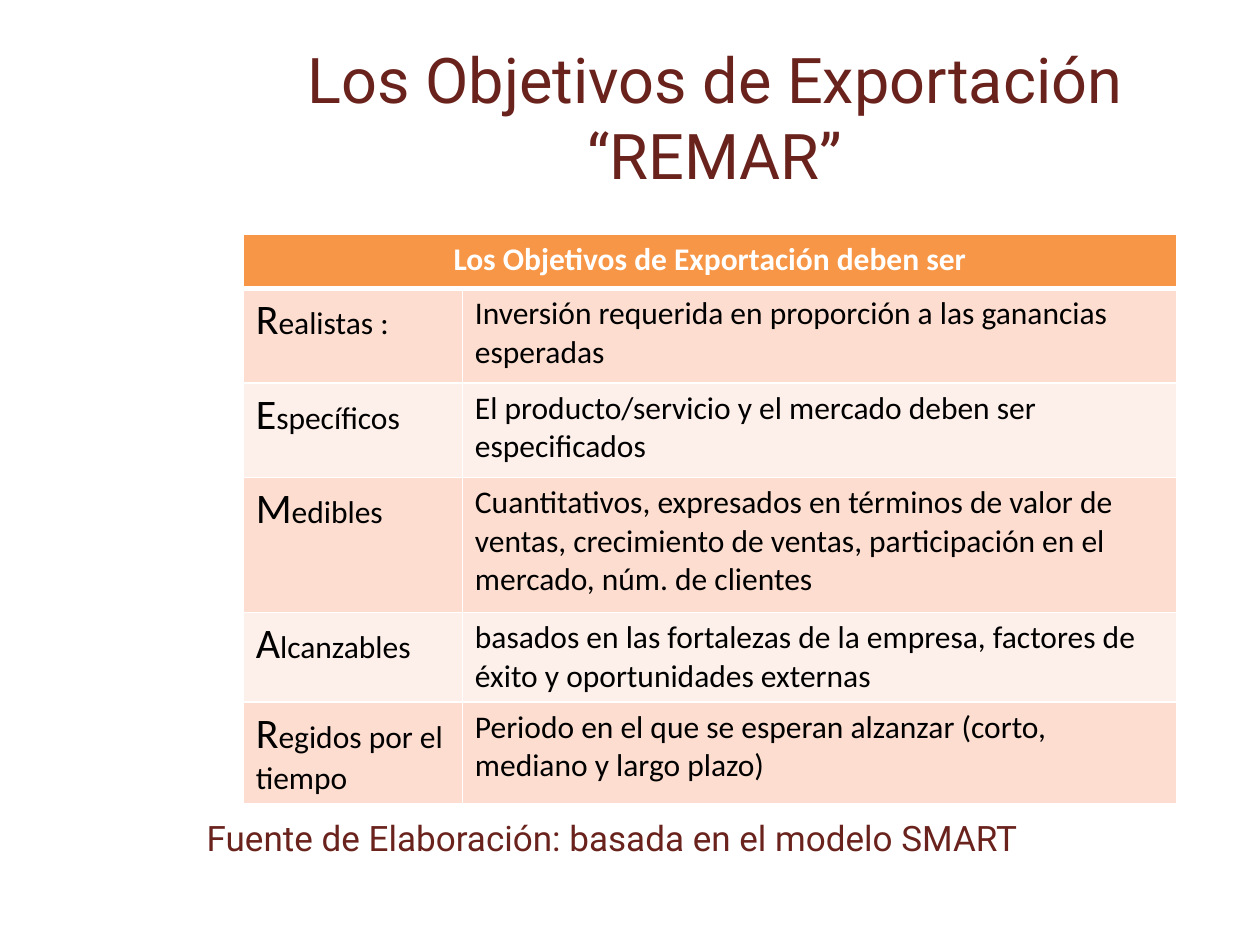
from lxml import etree
from pptx import Presentation
from pptx.dml.color import RGBColor
from pptx.enum.text import MSO_ANCHOR, MSO_AUTO_SIZE, PP_ALIGN
from pptx.oxml.ns import qn
from pptx.util import Inches, Pt

CENTER, LEFT = PP_ALIGN.CENTER, PP_ALIGN.LEFT
MIDDLE, TOP = MSO_ANCHOR.MIDDLE, MSO_ANCHOR.TOP
NO_AUTOFIT = MSO_AUTO_SIZE.NONE

# Content
TITLE = "Los Objetivos de Exportación “REMAR”"
HEADER = "Los Objetivos de Exportación deben ser"
OBJECTIVES = [
    ("Realistas :", "Inversión requerida en proporción a las ganancias esperadas"),
    ("Específicos", "El producto/servicio y el mercado deben ser especificados"),
    ("Medibles", "Cuantitativos, expresados en términos de valor de ventas, "
                 "crecimiento de ventas, participación en el mercado, núm. de clientes"),
    ("Alcanzables", "basados en las fortalezas de la empresa, factores de éxito "
                    "y oportunidades externas"),
    ("Regidos por el tiempo", "Periodo en el que se esperan alzanzar (corto, "
                              "mediano y largo plazo)"),
]
SOURCE = "Fuente de Elaboración: basada en el modelo SMART"

# Format
MAROON, ORANGE, WHITE, BLACK = "6A221D", "F79646", "FFFFFF", "000000"
BANDS = ["FCDDCF", "FDEFE9"]
COLUMN_WIDTHS = [1.74, 5.67]
ROW_HEIGHTS = [0.43, 0.75, 0.75, 1.07, 0.71, 0.75]


def color(value):
    return RGBColor.from_string(value)


def write(frame, *texts, sizes=(18,), font="Calibri", fill=BLACK, bold=False,
          align=LEFT, anchor=TOP):
    """Write one paragraph, with one run for each text and size."""
    frame.word_wrap = True
    frame.vertical_anchor = anchor
    paragraph = frame.paragraphs[0]
    paragraph.alignment = align
    for text, size in zip(texts, sizes):
        run = paragraph.add_run()
        run.text = text
        run.font.name = font
        run.font.size = Pt(size)
        run.font.bold = bold
        run.font.color.rgb = color(fill)
    return paragraph


def place(shape, left, top, width, height):
    shape.left, shape.top = Inches(left), Inches(top)
    shape.width, shape.height = Inches(width), Inches(height)
    shape.text_frame.auto_size = NO_AUTOFIT


def format_cell(cell, fill, bottom=1):
    """Fill a cell and draw its white borders."""
    properties = cell._tc.get_or_add_tcPr()
    for side, width in (("L", 1), ("R", 1), ("T", 1), ("B", bottom)):
        line = etree.SubElement(properties, qn(f"a:ln{side}"), w=str(Pt(width)))
        solid = etree.SubElement(line, qn("a:solidFill"))
        etree.SubElement(solid, qn("a:srgbClr"), val=WHITE)
    cell.fill.solid()
    cell.fill.fore_color.rgb = color(fill)


presentation = Presentation()
presentation.slide_width, presentation.slide_height = Inches(10), Inches(7.5)
slide = presentation.slides.add_slide(presentation.slide_layouts[1])
title, body = slide.placeholders

# Title
place(title, 1.85, 0.3, 7.65, 1.25)
write(title.text_frame, TITLE, sizes=[36], font="Roboto", fill=MAROON,
      align=CENTER, anchor=MIDDLE)

# Table of objectives
table = slide.shapes.add_table(
    len(ROW_HEIGHTS), len(COLUMN_WIDTHS), Inches(1.93), Inches(1.86),
    Inches(sum(COLUMN_WIDTHS)), Inches(sum(ROW_HEIGHTS))).table
for column, width in zip(table.columns, COLUMN_WIDTHS):
    column.width = Inches(width)
for row, height in zip(table.rows, ROW_HEIGHTS):
    row.height = Inches(height)

header = table.cell(0, 0)
header.merge(table.cell(0, 1))
for cell in table.rows[0].cells:
    format_cell(cell, ORANGE, bottom=3)
write(header.text_frame, HEADER, fill=WHITE, bold=True, align=CENTER)

for index, (name, description) in enumerate(OBJECTIVES):
    name_cell, description_cell = table.rows[index + 1].cells
    for cell in (name_cell, description_cell):
        format_cell(cell, BANDS[index % 2])
    write(name_cell.text_frame, name[0], name[1:], sizes=[24, 18])
    write(description_cell.text_frame, description)

# Source line
place(body, 1.54, 6.43, 8.04, 0.5)
paragraph = write(body.text_frame, SOURCE, sizes=[20], font="Roboto", fill=MAROON)
paragraph.space_before = Pt(0)
properties = paragraph._p.get_or_add_pPr()
properties.set("marL", str(Inches(0.38)))
properties.set("indent", str(Inches(-0.38)))
etree.SubElement(properties, qn("a:buNone"))

presentation.save("out.pptx")
